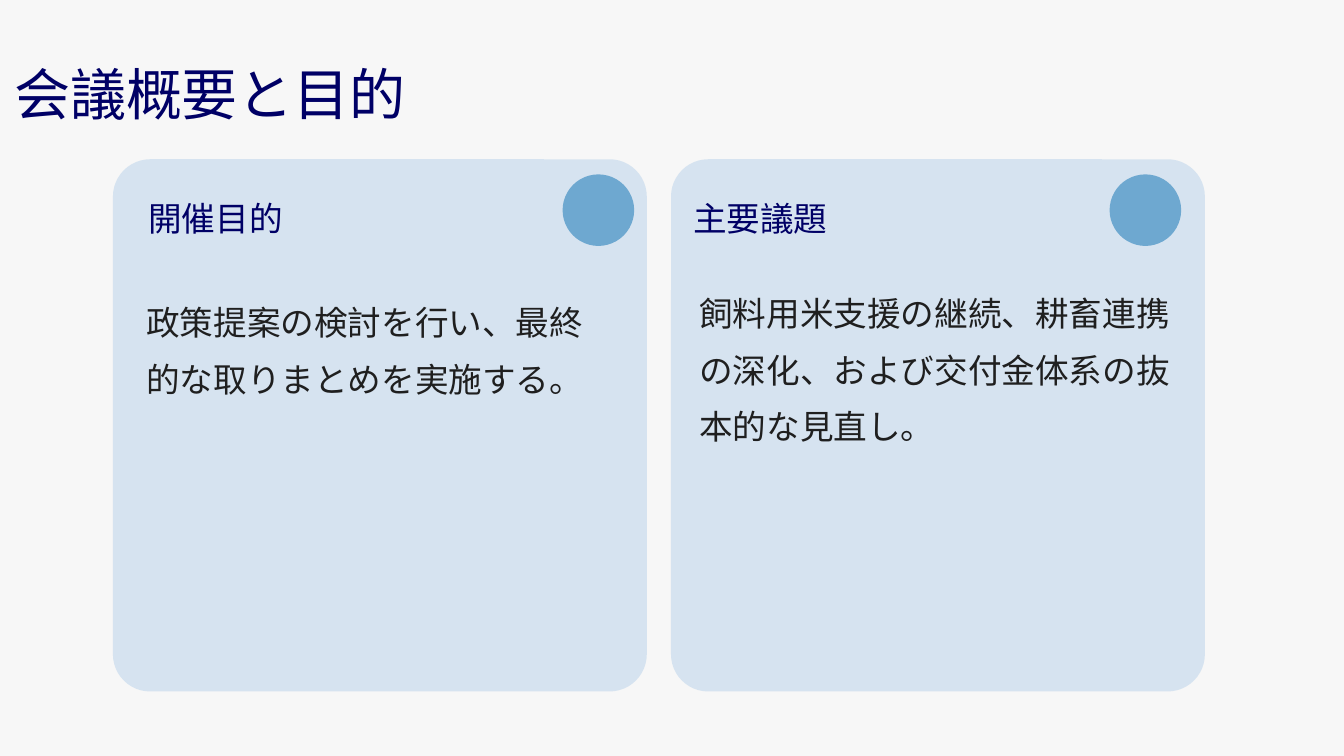
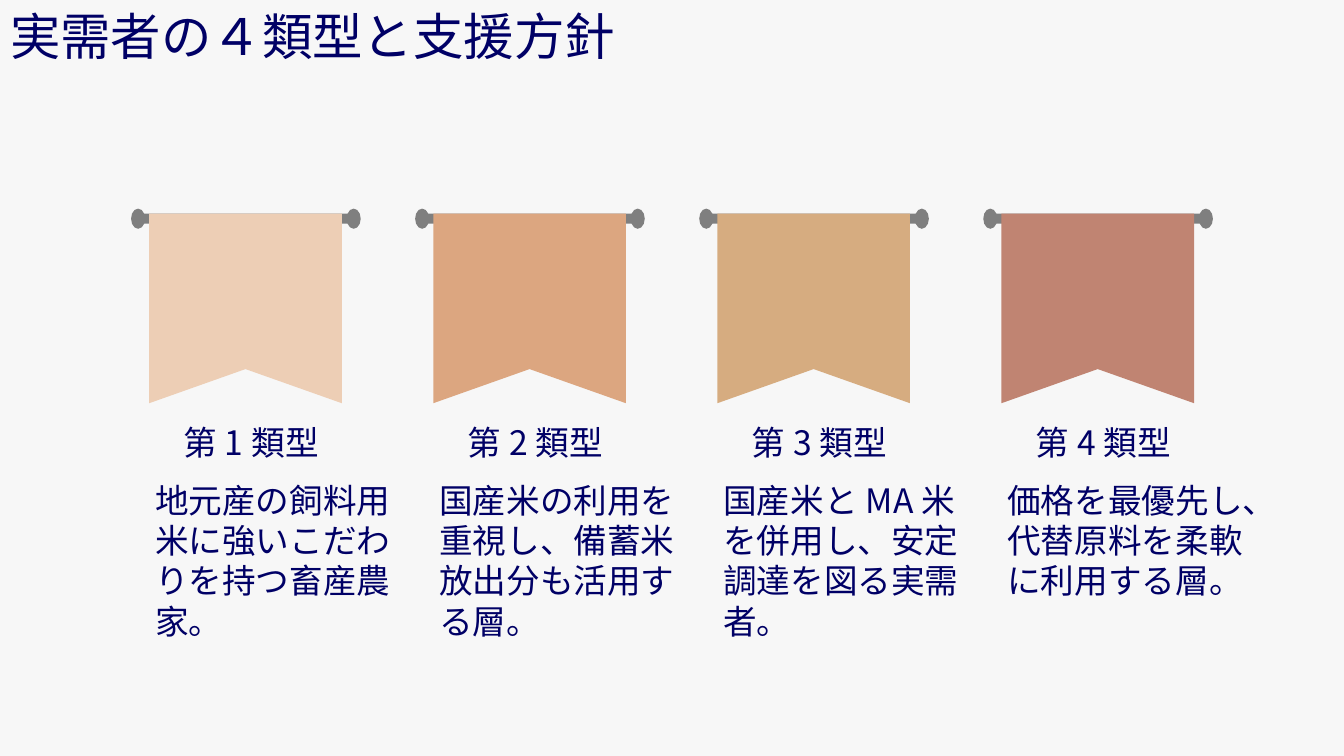
from dataclasses import dataclass
from math import cos, radians, sin
from typing import NamedTuple

from lxml.etree import SubElement
from pptx import Presentation
from pptx.dml.color import RGBColor
from pptx.enum.shapes import MSO_SHAPE
from pptx.enum.text import MSO_ANCHOR, MSO_AUTO_SIZE, PP_ALIGN
from pptx.oxml.ns import qn
from pptx.util import Inches, Pt


@dataclass(frozen=True)
class Theme:
    font: str = "Noto Sans CJK JP"
    background: str = "F7F7F7"
    navy: str = "000066"
    ink: str = "1F1F1F"
    card: str = "CEDFEF"
    dot: str = "6EA8D0"
    rod: str = "7F7F7F"
    banners: tuple = ("EDCEB5", "DCA680", "D6AC80", "C08472")
    overview_title: int = 40
    types_title: int = 36
    text: int = 24


class Box(NamedTuple):
    left: float
    top: float
    width: float
    height: float

    def inside(self, left, top, width, height):
        """Place a box, sized in inches, relative to this one's corner."""
        return Box(self.left + left, self.top + top, width, height)

    def columns(self, count, gap):
        width = (self.width - gap * (count - 1)) / count
        return [self.inside(i * (width + gap), 0, width, self.height)
                for i in range(count)]

    def emu(self):
        return [Inches(length) for length in self]


THEME = Theme()
PAGE = Box(0, 0, 13.33, 7.5)
CARD_MARGINS = (0.07, 0.04, 0.07, 0.04)
PLAIN_MARGINS = (0.1, 0.05, 0.1, 0)

# heading, body, then offsets inside the card: heading left, body box, dot left
CARDS = [
    ("開催目的", "政策提案の検討を行い、最終的な取りまとめを実施する。",
     0.28, (0.26, 1.22, 4.61, 3.83), 4.46),
    ("主要議題", "飼料用米支援の継続、耕畜連携の深化、および交付金体系の抜本的な見直し。",
     0.15, (0.21, 1.13, 4.86, 3.83), 4.35),
]
TYPES = [
    ("第1類型", "地元産の飼料用米に強いこだわりを持つ畜産農家。"),
    ("第2類型", "国産米の利用を重視し、備蓄米放出分も活用する層。"),
    ("第3類型", "国産米とMA米を併用し、安定調達を図る実需者。"),
    ("第4類型", "価格を最優先し、代替原料を柔軟に利用する層。"),
]


def paint(shape, color, opacity=100):
    shape.shadow.inherit = False
    shape.fill.solid()
    shape.fill.fore_color.rgb = RGBColor.from_string(color)
    shape.line.fill.background()
    if opacity < 100:
        fill_color = shape._element.spPr.find(".//" + qn("a:srgbClr"))
        SubElement(fill_color, qn("a:alpha"), val=str(opacity * 1000))


def write(shape, text, size=THEME.text, color=THEME.navy, margins=PLAIN_MARGINS,
          anchor=MSO_ANCHOR.TOP, spacing=1.0):
    frame = shape.text_frame
    frame.word_wrap = True
    frame.auto_size = MSO_AUTO_SIZE.NONE
    frame.vertical_anchor = anchor
    (frame.margin_left, frame.margin_top,
     frame.margin_right, frame.margin_bottom) = map(Inches, margins)
    paragraph = frame.paragraphs[0]
    paragraph.alignment = PP_ALIGN.LEFT
    paragraph.line_spacing = spacing
    run = paragraph.add_run()
    run.text = text
    run.font.size = Pt(size)
    run.font.name = THEME.font
    run.font.color.rgb = RGBColor.from_string(color)
    SubElement(run.font._element, qn("a:ea"), typeface=THEME.font)


def add_text(slide, box, text, **formatting):
    write(slide.shapes.add_textbox(*box.emu()), text, **formatting)


def add_preset(slide, preset, box, color, opacity=100):
    shape = slide.shapes.add_shape(preset, *box.emu())
    paint(shape, color, opacity)
    return shape


def add_outline(slide, points, color):
    corners = [(Inches(x), Inches(y)) for x, y in points]
    builder = slide.shapes.build_freeform(*corners[0])
    builder.add_line_segments(corners[1:], close=True)
    paint(builder.convert_to_shape(), color)


def add_titled_slide(presentation, box, text, **formatting):
    slide = presentation.slides.add_slide(presentation.slide_layouts[5])
    title = slide.shapes.title
    title.left, title.top, title.width, title.height = box.emu()
    write(title, text, **formatting)
    return slide


def draw_card(slide, box, heading, body, heading_left, body_place, dot_left):
    card = add_preset(slide, MSO_SHAPE.ROUNDED_RECTANGLE, box, THEME.card, 80)
    card.adjustments[0] = 0.07
    add_preset(slide, MSO_SHAPE.OVAL, box.inside(dot_left, 0.15, 0.71, 0.71),
               THEME.dot)
    add_text(slide, box.inside(heading_left, 0.27, 3.67, 0.54), heading,
             margins=CARD_MARGINS, anchor=MSO_ANCHOR.MIDDLE, spacing=1.2)
    add_text(slide, box.inside(*body_place), body, color=THEME.ink,
             margins=CARD_MARGINS, spacing=1.4)


def draw_rod(slide, box):
    """Draw a bar with an oval knob at each end, as one outline."""
    radius_x, radius_y = 0.07, box.height / 2
    middle = box.top + radius_y

    def knob(center, start):
        angles = (radians(start + step) for step in range(0, 301, 30))
        return [(center + radius_x * cos(angle), middle + radius_y * sin(angle))
                for angle in angles]

    right_knob = knob(box.left + box.width - radius_x, 210)
    left_knob = knob(box.left + radius_x, 30)
    add_outline(slide, right_knob + left_knob, THEME.rod)


def draw_cloth(slide, box, color):
    """Draw a hanging cloth with a notch in its lower edge."""
    right, bottom = box.left + box.width, box.top + box.height
    notch = (box.left + box.width / 2, bottom - 0.18 * box.height)
    add_outline(slide, [notch, (right, bottom), (right, box.top),
                        (box.left, box.top), (box.left, bottom)], color)


def draw_banner(slide, box, color, heading, body):
    draw_rod(slide, box.inside(0, 0, box.width, 0.2))
    draw_cloth(slide, box.inside(0.18, 0.05, 1.91, 1.88), color)
    add_text(slide, box.inside(0.42, 2.07, 1.94, 0.77), heading)
    add_text(slide, box.inside(0.14, 2.64, 2.68, 2.18), body)


def build_overview(presentation):
    slide = add_titled_slide(
        presentation, PAGE.inside(0, 0.29, PAGE.width, 1), "会議概要と目的",
        size=THEME.overview_title, margins=(0.14, 0.14, 0.06, 0.14),
        anchor=MSO_ANCHOR.MIDDLE, spacing=1.4)
    cards = PAGE.inside(1.12, 1.58, 10.83, 5.28)
    for box, card in zip(cards.columns(len(CARDS), 0.24), CARDS):
        draw_card(slide, box, *card)


def build_types(presentation):
    slide = add_titled_slide(
        presentation, PAGE.inside(0, 0, PAGE.width, 0.73),
        "実需者の４類型と支援方針", size=THEME.types_title)
    banners = PAGE.inside(1.3, 2.07, 10.73, 4.82)
    boxes = banners.columns(len(TYPES), 0.54)
    for box, color, texts in zip(boxes, THEME.banners, TYPES):
        draw_banner(slide, box, color, *texts)


def main():
    presentation = Presentation()
    presentation.slide_width = Inches(PAGE.width)
    presentation.slide_height = Inches(PAGE.height)
    background = presentation.slide_master.background.fill
    background.solid()
    background.fore_color.rgb = RGBColor.from_string(THEME.background)
    build_overview(presentation)
    build_types(presentation)
    presentation.save("out.pptx")


if __name__ == "__main__":
    main()
